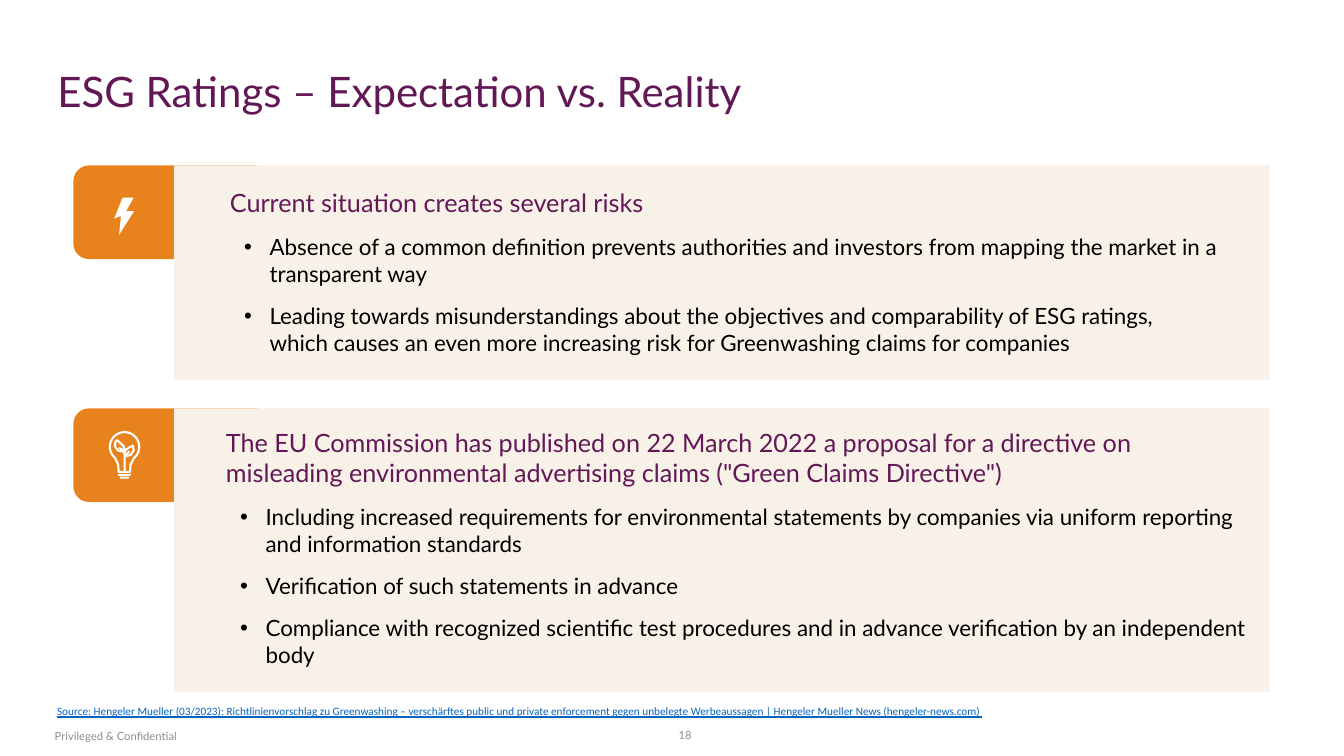
from dataclasses import dataclass
from math import cos, radians, sin

from lxml import etree
from pptx import Presentation
from pptx.dml.color import RGBColor
from pptx.enum.shapes import MSO_SHAPE
from pptx.enum.text import MSO_ANCHOR, MSO_AUTO_SIZE, PP_ALIGN
from pptx.oxml.ns import qn
from pptx.util import Cm, Pt

RECTANGLE, ROUNDED = MSO_SHAPE.RECTANGLE, MSO_SHAPE.ROUNDED_RECTANGLE
LEFT, CENTER, RIGHT = PP_ALIGN.LEFT, PP_ALIGN.CENTER, PP_ALIGN.RIGHT
TOP, MIDDLE, BOTTOM = MSO_ANCHOR.TOP, MSO_ANCHOR.MIDDLE, MSO_ANCHOR.BOTTOM
FIXED = MSO_AUTO_SIZE.NONE

PURPLE, ORANGE, CREAM = "631856", "E7821D", "F8F1E8"
BLACK, WHITE, GRAY, LINK_BLUE = "000000", "FFFFFF", "8C8C8C", "0563C1"
TWO_CONTENT = 3

Point = tuple[float, float]


@dataclass
class Box:
    left: float
    top: float
    width: float
    height: float


@dataclass
class Card:
    top: float
    height: float
    text_box: Box
    heading: str
    bullets: list[str]


@dataclass
class Note:
    box: Box
    text: str
    color: str = GRAY
    font: str = "Lato"
    align: PP_ALIGN = LEFT
    anchor: MSO_ANCHOR = MIDDLE
    underline: bool = False


@dataclass
class Stroke:
    points: list[Point]
    closed: bool


CARDS = [
    Card(4.17, 5.41, Box(5.54, 4.6, 26.26, 4.93),
         "Current situation creates several risks",
         ["Absence of a common definition prevents authorities and investors "
          "from mapping the market in a transparent way",
          "Leading towards misunderstandings about the objectives and "
          "comparability of ESG ratings,\vwhich causes an even more increasing "
          "risk for Greenwashing claims for companies"]),
    Card(10.29, 7.14, Box(5.44, 10.64, 26.26, 7.24),
         "The EU Commission has published on 22 March 2022 a proposal for a directive "
         'on misleading environmental advertising claims ("Green Claims Directive")',
         ["Including increased requirements for environmental statements by "
          "companies via uniform reporting and information standards",
          "Verification of such statements in advance",
          "Compliance with recognized scientific test procedures and in advance "
          "verification by an independent body"]),
]

NOTES = [
    Note(Box(0.38, 18.03, 5.08, 1.02), "Privileged & Confidential", align=CENTER),
    Note(Box(10.06, 18.01, 7.62, 1.02), "18", align=RIGHT),
    Note(Box(1.19, 17.63, 24.56, 0.61),
         "Source: Hengeler Mueller (03/2023): Richtlinienvorschlag zu Greenwashing – "
         "verschärftes public und private enforcement gegen unbelegte Werbeaussagen | "
         "Hengeler Mueller News (hengeler-news.com)",
         LINK_BLUE, "Calibri", anchor=TOP, underline=True),
]

BOLT = [(3.09, 4.98), (3.37, 4.98), (3.18, 5.32), (3.38, 5.32),
        (3.0, 5.92), (3.05, 5.44), (2.88, 5.51)]

BULB_CENTER, BULB_RADIUS = (3.14, 11.26), 0.37
BULB_GLASS = [(BULB_CENTER[0] + BULB_RADIUS * cos(radians(angle)),
               BULB_CENTER[1] + BULB_RADIUS * sin(radians(angle)))
              for angle in range(130, 411, 10)]
BULB_NECK = [(3.29, 11.71), (3.28, 11.89), (2.99, 11.89), (2.98, 11.71)]
BULB_STROKES = [
    Stroke(BULB_GLASS + BULB_NECK, True),
    Stroke([(3.12, 11.39), (2.97, 11.35), (2.9, 11.25), (2.91, 11.13),
            (2.95, 11.09), (3.05, 11.18), (3.12, 11.25)], True),
    Stroke([(3.15, 11.51), (3.3, 11.46), (3.37, 11.35), (3.35, 11.23),
            (3.25, 11.28), (3.17, 11.33), (3.14, 11.43)], True),
    Stroke([(3.14, 11.89), (3.14, 11.39), (3.0, 11.28)], False),
    Stroke([(3.14, 11.51), (3.26, 11.37)], False),
]
BULB_BASE = [Box(2.98, 11.94, 0.32, 0.05), Box(3.02, 12.01, 0.23, 0.05)]


def rgb(color: str) -> RGBColor:
    return RGBColor.from_string(color)


def place(shape, box: Box) -> None:
    shape.left, shape.top = Cm(box.left), Cm(box.top)
    shape.width, shape.height = Cm(box.width), Cm(box.height)


def paint(shape, color: str) -> None:
    shape.shadow.inherit = False
    shape.fill.solid()
    shape.fill.fore_color.rgb = rgb(color)
    shape.line.fill.background()


def add_block(slide, kind: MSO_SHAPE, box: Box, color: str) -> None:
    shape = slide.shapes.add_shape(kind, Cm(box.left), Cm(box.top),
                                   Cm(box.width), Cm(box.height))
    paint(shape, color)


def add_outline(slide, points: list[Point], closed: bool = True):
    corners = [(Cm(x), Cm(y)) for x, y in points]
    builder = slide.shapes.build_freeform(*corners[0])
    builder.add_line_segments(corners[1:], close=closed)
    return builder.convert_to_shape()


def add_bulb(slide) -> None:
    for stroke in BULB_STROKES:
        shape = add_outline(slide, stroke.points, stroke.closed)
        shape.shadow.inherit = False
        shape.fill.background()
        shape.line.color.rgb = rgb(WHITE)
        shape.line.width = Pt(1.5)
    for bar in BULB_BASE:
        add_block(slide, ROUNDED, bar, WHITE)


def format_runs(paragraph, size: float, color: str, font: str = "Lato") -> None:
    for run in paragraph.runs:
        run.font.size, run.font.name = Pt(size), font
        run.font.color.rgb = rgb(color)


def set_bullet(paragraph, left: float, hanging: float, symbol: str = "") -> None:
    """Set the indents and the bullet; no symbol means no bullet."""
    properties = paragraph._p.get_or_add_pPr()
    properties.set("marL", str(Cm(left)))
    properties.set("indent", str(-Cm(hanging)))
    if symbol:
        etree.SubElement(properties, qn("a:buFont"), typeface="Arial")
        etree.SubElement(properties, qn("a:buChar"), char=symbol)
    else:
        etree.SubElement(properties, qn("a:buNone"))


def prepare_frame(shape, anchor: MSO_ANCHOR):
    frame = shape.text_frame
    frame.word_wrap, frame.auto_size = True, FIXED
    frame.vertical_anchor = anchor
    return frame


def fill_title(shape) -> None:
    place(shape, Box(1.19, 0.71, 21.01, 2.36))
    frame = prepare_frame(shape, BOTTOM)
    frame.text = "ESG Ratings – Expectation vs. Reality"
    paragraph = frame.paragraphs[0]
    paragraph.alignment, paragraph.line_spacing = LEFT, 0.9
    format_runs(paragraph, 30, PURPLE)


def fill_card_text(shape, card: Card) -> None:
    place(shape, card.text_box)
    frame = prepare_frame(shape, TOP)
    frame.text = card.heading
    heading = frame.paragraphs[0]
    set_bullet(heading, 0, 0)
    heading.space_before, heading.space_after = Pt(0), Pt(6)
    format_runs(heading, 18, PURPLE)
    for text in card.bullets:
        paragraph = frame.add_paragraph()
        paragraph.text, paragraph.level = text, 1
        set_bullet(paragraph, 1, 0.64, "•")
        paragraph.space_before, paragraph.space_after = Pt(5), Pt(6)
        format_runs(paragraph, 16, BLACK)


def add_note(slide, note: Note) -> None:
    box = note.box
    shape = slide.shapes.add_textbox(Cm(box.left), Cm(box.top),
                                     Cm(box.width), Cm(box.height))
    frame = prepare_frame(shape, note.anchor)
    frame.text = note.text
    paragraph = frame.paragraphs[0]
    paragraph.alignment = note.align
    format_runs(paragraph, 8, note.color, note.font)
    if note.underline:
        paragraph.runs[0].font.underline = True


def main() -> None:
    presentation = Presentation()
    presentation.slide_width, presentation.slide_height = Cm(33.87), Cm(19.05)
    slide = presentation.slides.add_slide(presentation.slide_layouts[TWO_CONTENT])
    title, *bodies = slide.placeholders
    fill_title(title)
    for card, body in zip(CARDS, bodies):
        add_block(slide, ROUNDED, Box(1.85, card.top, 4.98, 2.36), ORANGE)
        add_block(slide, RECTANGLE, Box(4.39, card.top, 27.61, card.height), CREAM)
        fill_card_text(body, card)
        slide.shapes.element.append(body.element)  # bring the text above its panel
    paint(add_outline(slide, BOLT), WHITE)
    add_bulb(slide)
    for note in NOTES:
        add_note(slide, note)
    presentation.save("out.pptx")


if __name__ == "__main__":
    main()
